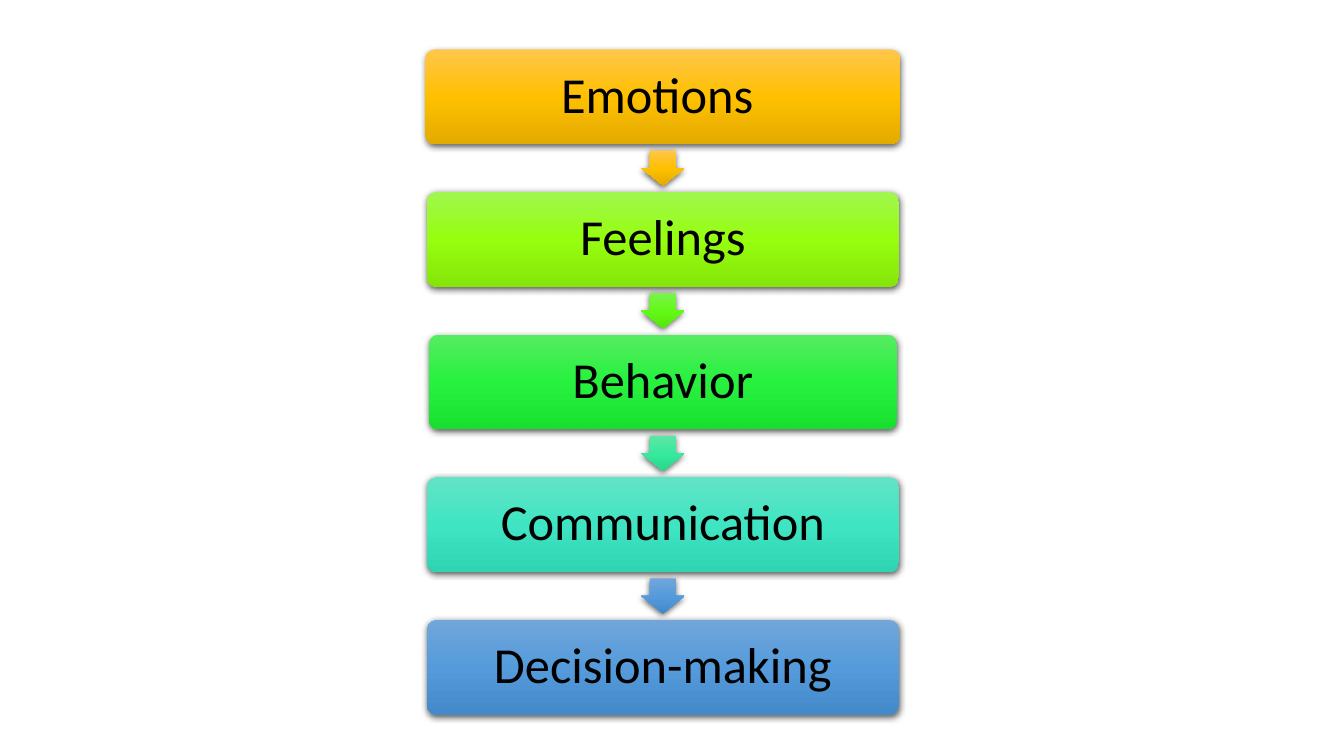
from lxml.etree import SubElement
from pptx import Presentation
from pptx.dml.color import RGBColor
from pptx.enum.shapes import MSO_SHAPE
from pptx.enum.text import MSO_ANCHOR, PP_ALIGN
from pptx.oxml.ns import qn
from pptx.util import Inches, Pt

COLORS = {
    "text": "000000",
    "shadow": "000000",
    "amber": ("FFC64B", "FFC000", "E3AB00"),
    "lime": ("A0F74E", "96FE0E", "85E509"),
    "leaf": ("7AF350", "63F916", "56E50C"),
    "green": ("56EC62", "27F13E", "18E02F"),
    "mint": ("5EE6A6", "37E99C", "27D88C"),
    "teal": ("63E3C6", "3FE5C3", "2FD4B2"),
    "blue": ("71A6DB", "559BDB", "448ACA"),
}
STEPS = [
    ("Emotions ", 4.71, "amber", "amber"),
    ("Feelings", 4.68, "lime", "leaf"),
    ("Behavior", 4.64, "green", "mint"),
    ("Communication", 4.68, "teal", "blue"),
    ("Decision-making", 4.68, "blue", None),
]
STEP_HEIGHT = 0.94
ARROW_LENGTH, ARROW_WIDTH = 0.35, 0.43


def add_color(parent, value):
    return SubElement(parent, qn("a:srgbClr"), val=value)


def style_surface(shape, shades):
    shape.line.fill.background()
    shape.fill.gradient()
    gradient = shape.fill._xPr.find(qn("a:gradFill"))
    gradient.set("rotWithShape", "0")
    for child in list(gradient):
        gradient.remove(child)
    stops = SubElement(gradient, qn("a:gsLst"))
    for position, shade in zip((0, 50000, 100000), shades):
        add_color(SubElement(stops, qn("a:gs"), pos=str(position)), shade)
    SubElement(gradient, qn("a:lin"), ang="5400000", scaled="0")

    shape.shadow.inherit = False
    effects = shape.fill._xPr.find(qn("a:effectLst"))
    shadow = SubElement(
        effects, qn("a:outerShdw"), blurRad=str(Pt(4.5)), dist=str(Pt(1.5)),
        dir="5400000", algn="ctr", rotWithShape="0")
    SubElement(add_color(shadow, COLORS["shadow"]), qn("a:alpha"), val="63000")


def add_step(slide, label, left, top, width, height, shades):
    step = slide.shapes.add_shape(
        MSO_SHAPE.ROUNDED_RECTANGLE,
        Inches(left), Inches(top), Inches(width), Inches(height))
    step.adjustments[0] = 0.1
    style_surface(step, shades)
    frame = step.text_frame
    frame.word_wrap = True
    frame.vertical_anchor = MSO_ANCHOR.MIDDLE
    frame.margin_left = frame.margin_right = Inches(0.15)
    frame.margin_top = frame.margin_bottom = Inches(0.15)
    frame.text = label
    paragraph = frame.paragraphs[0]
    paragraph.alignment = PP_ALIGN.CENTER
    paragraph.line_spacing = 0.9
    paragraph.space_after = Pt(12.6)
    font = paragraph.runs[0].font
    font.name = "Calibri"
    font.size = Pt(36)
    font.color.rgb = RGBColor.from_string(COLORS["text"])


def add_down_arrow(slide, center_x, center_y, shades):
    arrow = slide.shapes.add_shape(
        MSO_SHAPE.RIGHT_ARROW,
        Inches(center_x - ARROW_LENGTH / 2), Inches(center_y - ARROW_WIDTH / 2),
        Inches(ARROW_LENGTH), Inches(ARROW_WIDTH))
    arrow.rotation = 90
    arrow.adjustments[0] = 0.6
    arrow.adjustments[1] = 0.5
    style_surface(arrow, shades)


def add_process(slide, left, top, width, height):
    center_x = left + width / 2
    pitch = (height - STEP_HEIGHT) / (len(STEPS) - 1)
    for index, (label, step_width, step_color, arrow_color) in enumerate(STEPS):
        step_top = top + index * pitch
        add_step(slide, label, center_x - step_width / 2, step_top,
                 step_width, STEP_HEIGHT, COLORS[step_color])
        if arrow_color:
            add_down_arrow(slide, center_x, step_top + (STEP_HEIGHT + pitch) / 2,
                           COLORS[arrow_color])


def main():
    presentation = Presentation()
    presentation.slide_width = Inches(13.33)
    presentation.slide_height = Inches(7.5)
    slide = presentation.slides.add_slide(presentation.slide_layouts[6])
    add_process(slide, 4.22, 0.49, 4.71, 6.6)
    presentation.save("out.pptx")


if __name__ == "__main__":
    main()
